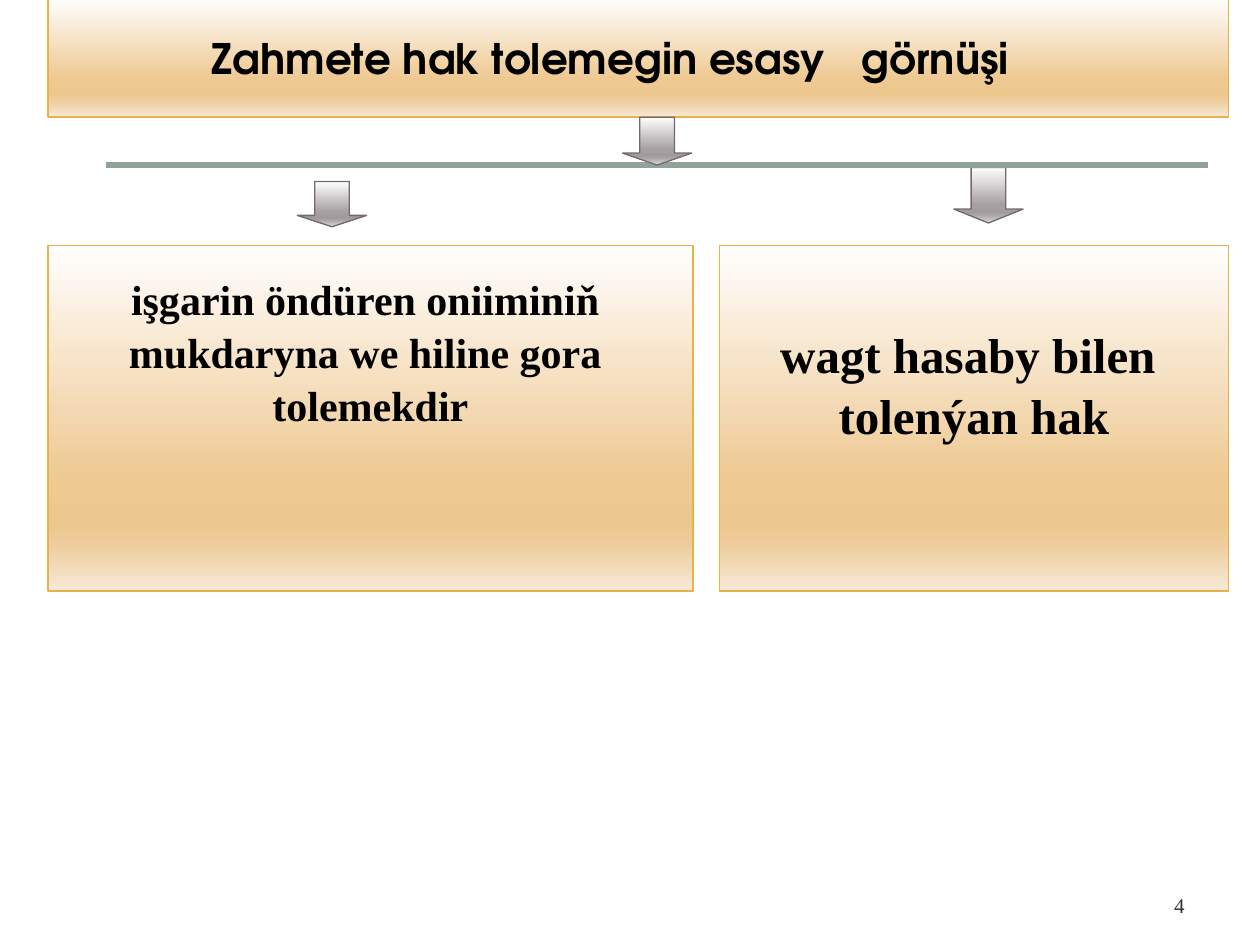
from lxml import etree
from pptx import Presentation
from pptx.dml.color import RGBColor
from pptx.enum.shapes import MSO_CONNECTOR, MSO_SHAPE
from pptx.enum.text import MSO_ANCHOR, MSO_AUTO_SIZE, PP_ALIGN
from pptx.oxml.ns import qn
from pptx.util import Inches, Pt

RECT, ARROW = MSO_SHAPE.RECTANGLE, MSO_SHAPE.DOWN_ARROW
LEFT, CENTER, RIGHT = PP_ALIGN.LEFT, PP_ALIGN.CENTER, PP_ALIGN.RIGHT
TOP, MIDDLE, BOTTOM = MSO_ANCHOR.TOP, MSO_ANCHOR.MIDDLE, MSO_ANCHOR.BOTTOM

W, H = 10, 7.5
MARGIN, RIGHT_EDGE = 0.38, 9.75
TITLE_BOTTOM, RULE_Y, BOX_TOP, BOX_BOTTOM = 0.93, 1.31, 1.95, 4.69
ARROW_W = 0.55

STOPS = (0, 68, 81, 86, 100)
GOLD = ("FFFEFE", "EEC992", "EDC88E", "EECC9B", "F7E9D7")
GREY = ("FEFEFE", "A59FA1", "A19B9E", "ABA6A8", "DCDADB")
GOLD_LINE, GREY_LINE, RULE = "E7B248", "76696E", "93A299"
BLACK, NUMBER = "000000", "333333"
SERIF, SANS = "Times New Roman", "TeX Gyre Adventor"


def rgb(value):
    return RGBColor.from_string(value)


def place(sp, x, y, w, h):
    sp.left, sp.top, sp.width, sp.height = map(Inches, (x, y, w, h))


def style(sp, colors, line):
    """Give a shape a five-stop vertical gradient and a thin outline."""
    sp.fill.gradient()
    sp.fill.gradient_angle = 270
    stops = sp._element.spPr.find(qn("a:gradFill")).find(qn("a:gsLst"))
    for old in list(stops):
        stops.remove(old)
    for pos, color in zip(STOPS, colors):
        gs = etree.SubElement(stops, qn("a:gs"), pos=str(pos * 1000))
        etree.SubElement(gs, qn("a:srgbClr"), val=color)
    sp.line.color.rgb = rgb(line)
    sp.line.width = Pt(0.75)


def write(sp, lines, size, font=SERIF, color=BLACK, bold=True, align=CENTER,
          anchor=TOP, left=0.1, top=0.05, spacing=1.0):
    tf = sp.text_frame
    tf.word_wrap = True
    tf.auto_size = MSO_AUTO_SIZE.NONE
    tf.vertical_anchor = anchor
    tf.margin_left, tf.margin_top = Inches(left), Inches(top)
    tf.text = "\n".join(lines)
    for p in tf.paragraphs:
        p.alignment = align
        p.line_spacing = spacing
        for r in p.runs:
            r.font.name, r.font.size, r.font.bold = font, Pt(size), bold
            r.font.color.rgb = rgb(color)


def add_tab_stop(p, pos):
    tabs = etree.SubElement(p._p.get_or_add_pPr(), qn("a:tabLst"))
    etree.SubElement(tabs, qn("a:tab"), pos=str(Inches(pos)), algn="l")


def add_title(s, text):
    sp = s.shapes.title
    place(sp, MARGIN, -0.02, RIGHT_EDGE - MARGIN, TITLE_BOTTOM + 0.02)
    style(sp, GOLD, GOLD_LINE)
    write(sp, [text], 24, font=SANS, align=LEFT, anchor=MIDDLE, left=1.3)
    add_tab_stop(sp.text_frame.paragraphs[0], 5.16)


def add_shape(s, kind, x, y, w, h, colors, line):
    sp = s.shapes.add_shape(kind, *map(Inches, (x, y, w, h)))
    sp.shadow.inherit = False
    style(sp, colors, line)
    return sp


def add_box(s, x, right, lines, size, top):
    sp = add_shape(s, RECT, x, BOX_TOP, right - x, BOX_BOTTOM - BOX_TOP,
                   GOLD, GOLD_LINE)
    write(sp, lines, size, top=top, spacing=1.05)


def add_arrow(s, x, y, h):
    sp = add_shape(s, ARROW, x, y, ARROW_W, h, GREY, GREY_LINE)
    sp.adjustments[0], sp.adjustments[1] = 0.5, 0.25


def add_rule(s, x1, x2, y):
    line = s.shapes.add_connector(MSO_CONNECTOR.STRAIGHT,
                                  *map(Inches, (x1, y, x2, y)))
    line.line.color.rgb = rgb(RULE)
    line.line.width = Pt(3)
    etree.SubElement(line._element.spPr, qn("a:effectLst"))


def add_number(s, text):
    sp = s.shapes.add_textbox(*map(Inches, (8.94, 6.83, 0.56, 0.5)))
    write(sp, [text], 12, color=NUMBER, bold=False, align=RIGHT, anchor=BOTTOM)


def main():
    prs = Presentation()
    prs.slide_width, prs.slide_height = Inches(W), Inches(H)
    s = prs.slides.add_slide(prs.slide_layouts[5])

    add_title(s, "Zahmete hak tolemegin esasy\tgörnüşi")
    add_box(s, MARGIN, 5.5, ["işgarin öndüren oniiminiň ",
                             "mukdaryna we hiline gora ", "tolemekdir"],
            24, top=0.2)
    add_box(s, 5.71, RIGHT_EDGE, ["wagt hasaby bilen ", "tolenýan hak"],
            28, top=0.6)
    add_arrow(s, 7.57, 1.33, 0.44)
    add_arrow(s, 2.36, 1.44, 0.36)
    add_rule(s, 0.84, 9.59, RULE_Y)
    add_arrow(s, 4.94, TITLE_BOTTOM, RULE_Y - TITLE_BOTTOM)
    add_number(s, "4")

    prs.save("out.pptx")


if __name__ == "__main__":
    main()
